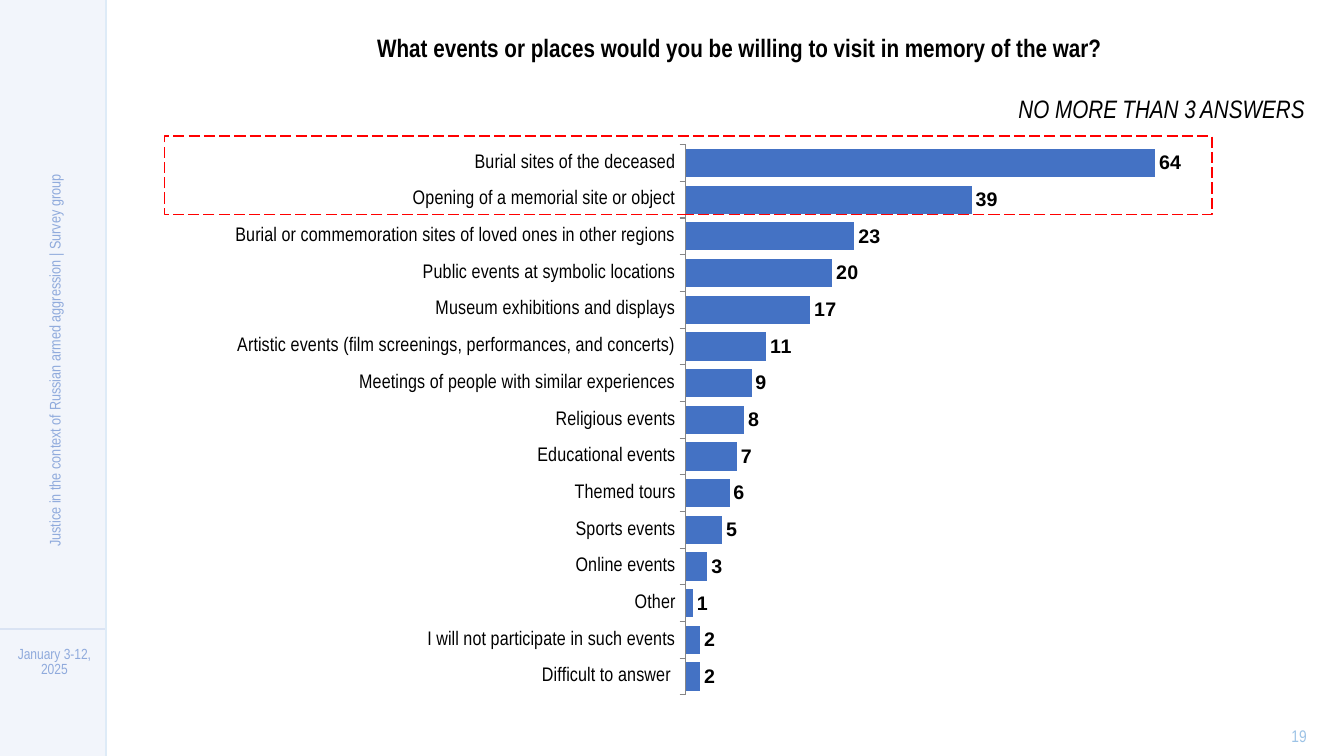
import pptx
import pptx.chart.data
import pptx.dml.color
import pptx.enum.chart
import pptx.enum.dml
import pptx.enum.shapes
import pptx.enum.text
import pptx.oxml
import pptx.oxml.ns
import pptx.util
from lxml import etree

Inch, Pt = pptx.util.Inches, pptx.util.Pt
RGB = pptx.dml.color.RGBColor
Align = pptx.enum.text.PP_ALIGN
Tick = pptx.enum.chart.XL_TICK_MARK
Spot = pptx.enum.chart.XL_TICK_LABEL_POSITION
qn = pptx.oxml.ns.qn

BLACK = RGB(0, 0, 0)
BAR = RGB(0x44, 0x72, 0xC4)
PALE = RGB(0xDA, 0xE3, 0xF3)
EDGE = RGB(0xDE, 0xEB, 0xF7)
SIDE = RGB(0x8F, 0xAA, 0xDC)
PAGE = RGB(0x9D, 0xC3, 0xE6)
RED = RGB(0xFF, 0, 0)
GREY = RGB(0x86, 0x86, 0x86)
NARROW = "Arial Narrow"
WIDE, HIGH = 13.33, 7.5

ROWS = [
    ("Burial sites of the deceased", 64),
    ("Opening of a memorial site or object", 39),
    ("Burial or commemoration sites of loved ones in other regions", 23),
    ("Public events at symbolic locations", 20),
    ("Museum exhibitions and displays", 17),
    ("Artistic events (film screenings, performances, and concerts)", 11),
    ("Meetings of people with similar experiences", 9),
    ("Religious events", 8),
    ("Educational events", 7),
    ("Themed tours", 6),
    ("Sports events", 5),
    ("Online events", 3),
    ("Other", 1),
    ("I will not participate in such events", 2),
    ("Difficult to answer ", 2),
]


def place(shape, box):
    shape.left, shape.top, shape.width, shape.height = map(Inch, box)


def style(font, size, color, bold=False, italic=False, face=NARROW):
    font.size, font.name = Pt(size), face
    font.bold, font.italic = bold, italic
    font.color.rgb = color


def text(slide, box, words, size=18, color=BLACK, align=Align.CENTER,
         bold=False, italic=False, space=None, turn=0, shape=None):
    shape = shape or slide.shapes.add_textbox(0, 0, 0, 0)
    place(shape, box)
    shape.rotation = turn
    frame = shape.text_frame
    frame.word_wrap = True
    frame.auto_size = pptx.enum.text.MSO_AUTO_SIZE.NONE
    frame.vertical_anchor = pptx.enum.text.MSO_ANCHOR.MIDDLE
    par = frame.paragraphs[0]
    par.alignment = align
    if space:
        par.line_spacing = Pt(space)
    run = par.add_run()
    run.text = words
    style(run.font, size, color, bold, italic)


def rule(slide, ends, color):
    line = slide.shapes.add_connector(
        pptx.enum.shapes.MSO_CONNECTOR.STRAIGHT, *map(Inch, ends))
    line.line.color.rgb = color
    line.line.width = Pt(1)
    etree.SubElement(line._element.spPr, qn("a:effectLst"))


def rect(slide, box):
    shape = slide.shapes.add_shape(
        pptx.enum.shapes.MSO_SHAPE.RECTANGLE, *map(Inch, box))
    shape.shadow.inherit = False
    return shape


def sidebar(slide, x, y, w, h):
    panel = rect(slide, (x, y, w, h))
    panel.fill.solid()
    panel.fill.fore_color.rgb = PALE
    tint = panel._element.spPr.find(".//" + qn("a:srgbClr"))
    etree.SubElement(tint, qn("a:alpha"), val="33000")
    panel.line.fill.background()
    # Dividers
    split = y + 0.832 * h
    rule(slide, (x, split, x + w, split), PALE)
    rule(slide, (x + w, y, x + w, y + h), EDGE)
    # Date and report name
    text(slide, (x, y + 0.856 * h, w + 0.03, 0.3), "January 3-12, 2025",
         size=10.5, color=SIDE, space=11)
    long = 0.68 * h
    text(slide, (x + 0.47 * w - long / 2, y + 0.457 * h, long, 0.3),
         "Justice in the context of Russian armed aggression | Survey group",
         size=11, color=SIDE, space=20, turn=270)


def header(slide, x, y, w, h):
    row = 0.4 * h
    text(slide, (x, y, w, row),
         "What events or places would you be willing to visit "
         "in memory of the war?", bold=True, shape=slide.shapes.title)
    text(slide, (x, y + h - row, w, row), "NO MORE THAN 3 ANSWERS",
         italic=True, align=Align.RIGHT)


def bars(slide, x, y, w, h):
    data = pptx.chart.data.CategoryChartData(number_format="0")
    data.categories = [name for name, _ in ROWS]
    data.add_series("Series 1", [value for _, value in ROWS])
    chart = slide.shapes.add_chart(
        pptx.enum.chart.XL_CHART_TYPE.BAR_CLUSTERED,
        *map(Inch, (x, y, w, h)), data).chart
    chart.has_legend = chart.has_title = False
    style(chart.font, 18, BLACK, face="Arial")
    # Axes
    names, scale = chart.category_axis, chart.value_axis
    names.reverse_order = True
    names.major_tick_mark = Tick.OUTSIDE
    names.has_major_gridlines = False
    names.format.line.color.rgb = GREY
    names.format.line.width = Pt(0.75)
    style(names.tick_labels.font, 14, BLACK)
    scale.minimum_scale, scale.maximum_scale = 0, 70
    scale.has_major_gridlines = scale.visible = False
    scale.tick_label_position = Spot.NONE
    # Bars and values
    plot = chart.plots[0]
    plot.gap_width, plot.vary_by_categories = 30, False
    fill = plot.series[0].format.fill
    fill.solid()
    fill.fore_color.rgb = BAR
    plot.has_data_labels = True
    tags = plot.data_labels
    tags.show_value = True
    tags.number_format, tags.number_format_is_linked = "0", False
    tags.position = pptx.enum.chart.XL_LABEL_POSITION.OUTSIDE_END
    style(tags.font, 14, BLACK, bold=True, face="Arial")
    # Fixed plot area
    area = chart._chartSpace.find(".//" + qn("c:plotArea"))
    for old in area.findall(qn("c:layout")):
        area.remove(old)
    layout = etree.Element(qn("c:layout"))
    manual = etree.SubElement(layout, qn("c:manualLayout"))
    for tag, val in (("layoutTarget", "inner"), ("xMode", "edge"),
                     ("yMode", "edge"), ("x", 0.486), ("y", 0.15),
                     ("w", 0.43), ("h", 0.831)):
        etree.SubElement(manual, qn("c:" + tag), val=str(val))
    area.insert(0, layout)


def frame(slide, *box):
    shape = rect(slide, box)
    shape.fill.background()
    shape.line.color.rgb = RED
    shape.line.width = Pt(1)
    shape.line.dash_style = pptx.enum.dml.MSO_LINE.LONG_DASH


def main():
    deck = pptx.Presentation()
    deck.slide_width, deck.slide_height = Inch(WIDE), Inch(HIGH)
    slide = deck.slides.add_slide(deck.slide_layouts[5])
    sidebar(slide, 0, 0, 1.05, HIGH)
    bars(slide, 1.04, 0.45, 11.85, 6.57)
    frame(slide, 1.63, 1.35, 10.39, 0.78)
    header(slide, 1.63, 0.27, 11.41, 1.01)
    text(slide, (12.56, 7.19, 0.65, 0.22), "19", size=12, color=PAGE)
    deck.save("out.pptx")


if __name__ == "__main__":
    main()
